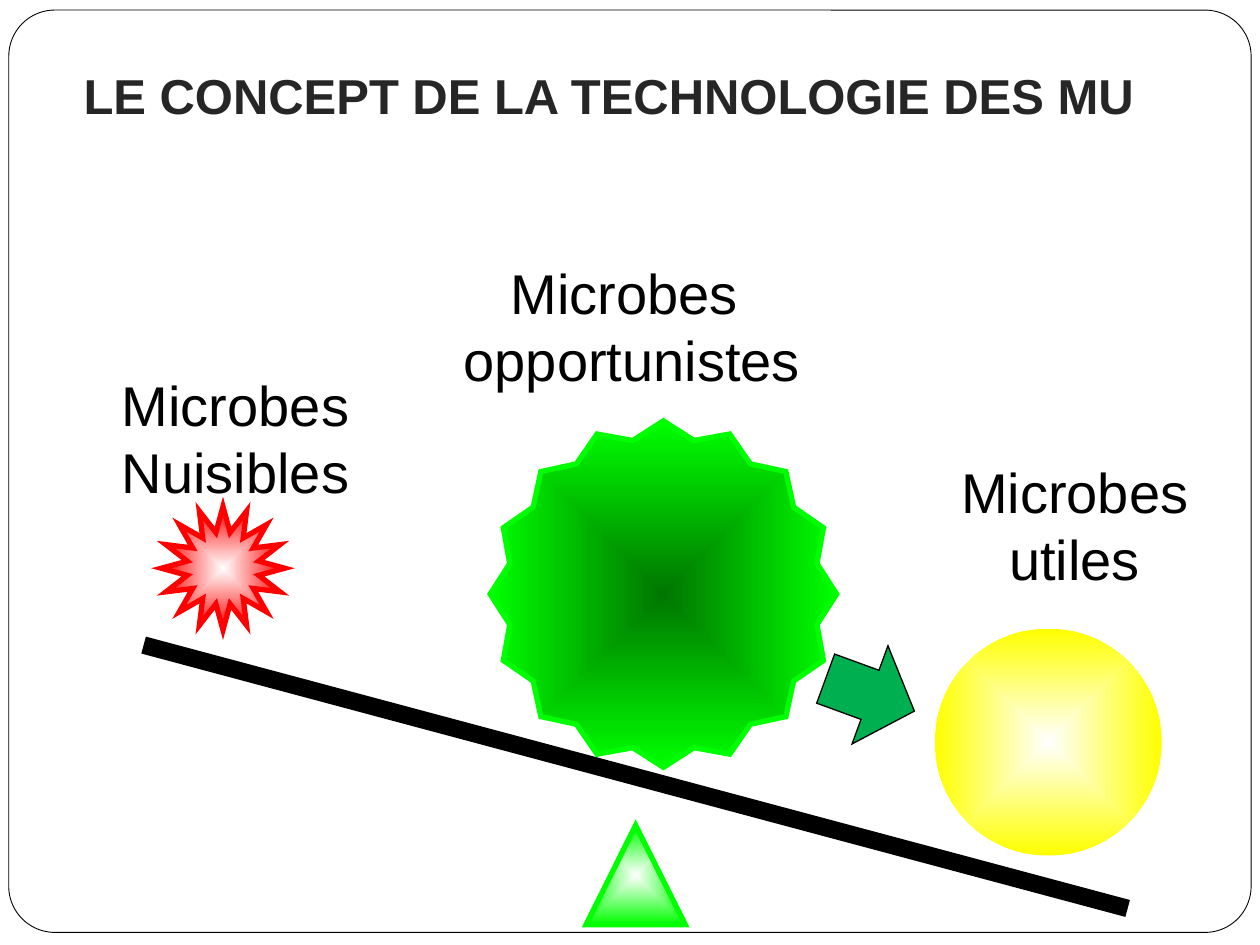
from lxml import etree
from pptx import Presentation
from pptx.dml.color import RGBColor
from pptx.enum import shapes, text
from pptx.oxml import parse_xml
from pptx.oxml.ns import nsdecls, qn
from pptx.util import Inches, Pt

BLACK = RGBColor(0x00, 0x00, 0x00)
WHITE = RGBColor(0xFF, 0xFF, 0xFF)
TITLE_GREY = RGBColor(0x26, 0x26, 0x26)
RED = RGBColor(0xFF, 0x00, 0x00)
YELLOW = RGBColor(0xFF, 0xFF, 0x00)
LIME = RGBColor(0x00, 0xFF, 0x00)
DARK_GREEN = RGBColor(0x00, 0x76, 0x00)
ARROW_GREEN = RGBColor(0x00, 0xB0, 0x50)

PRESET = shapes.MSO_SHAPE
LABEL_HEIGHT = 1.18


def add_preset(slide, preset, box, line=None, width=0, adjust=None):
    figure = slide.shapes.add_shape(preset, *map(Inches, box))
    figure.shadow.inherit = False
    if adjust is not None:
        figure.adjustments[0] = adjust
    if line is None:
        figure.line.fill.background()
    else:
        figure.line.color.rgb = line
        figure.line.width = Pt(width)
        outline = figure._element.spPr.find(qn("a:ln"))
        etree.SubElement(outline, qn("a:miter"), lim="800000")
    return figure


def fill_solid(figure, color):
    figure.fill.solid()
    figure.fill.fore_color.rgb = color


def fill_from_centre(figure, centre, edge):
    figure.fill.gradient()
    for stop, color in zip(figure.fill.gradient_stops, (centre, edge)):
        stop.color.rgb = color
    direction = figure.fill._xPr.find(qn("a:gradFill")).find(qn("a:lin"))
    direction.getparent().replace(direction, parse_xml(
        f'<a:path {nsdecls("a")} path="shape">'
        '<a:fillToRect l="50000" t="50000" r="50000" b="50000"/></a:path>'))


def add_beam(slide, start, end):
    beam = slide.shapes.add_connector(
        shapes.MSO_CONNECTOR.STRAIGHT, *map(Inches, start + end))
    beam.line.color.rgb = BLACK
    beam.line.width = Pt(10)
    etree.SubElement(beam._element.spPr, qn("a:effectLst"))


def add_text(slide, box, lines, size, color, bold=False, wrap=False):
    frame = slide.shapes.add_textbox(*map(Inches, box)).text_frame
    frame.word_wrap = wrap
    frame.text = "\n".join(lines)
    for paragraph in frame.paragraphs:
        paragraph.alignment = text.PP_ALIGN.CENTER
        paragraph.font.name = "Arial"
        paragraph.font.size = Pt(size)
        paragraph.font.bold = bold
        paragraph.font.color.rgb = color
    return frame


def add_label(slide, left, top, width, lines):
    frame = add_text(slide, (left, top, width, LABEL_HEIGHT), lines, 32, BLACK)
    frame.auto_size = text.MSO_AUTO_SIZE.SHAPE_TO_FIT_TEXT


def add_title(slide, title):
    frame = add_text(slide, (0.16, 0.17, 9.45, 0.92), [title], 28, TITLE_GREY,
                     bold=True, wrap=True)
    frame.vertical_anchor = text.MSO_ANCHOR.BOTTOM
    frame.margin_bottom = Inches(0.1)


def main():
    deck = Presentation()
    deck.slide_width, deck.slide_height = Inches(10), Inches(7.5)
    slide = deck.slides.add_slide(deck.slide_layouts[6])

    border = add_preset(slide, PRESET.ROUNDED_RECTANGLE, (0.07, 0.08, 9.86, 7.32),
                        BLACK, 0.5, 0.05)
    fill_solid(border, WHITE)

    harmful = add_preset(slide, PRESET.STAR_16_POINT, (1.28, 4.02, 0.98, 0.98),
                         RED, 3, 0.295)
    fill_from_centre(harmful, WHITE, RED)
    add_beam(slide, (1.14, 5.12), (8.95, 7.21))
    pivot = add_preset(slide, PRESET.ISOSCELES_TRIANGLE, (4.65, 6.55, 0.79, 0.79),
                       LIME, 3)
    fill_from_centre(pivot, WHITE, LIME)
    useful = add_preset(slide, PRESET.OVAL, (7.42, 4.99, 1.8, 1.8))
    fill_from_centre(useful, WHITE, YELLOW)
    opportunist = add_preset(slide, PRESET.STAR_16_POINT, (3.89, 3.34, 2.75, 2.75),
                             LIME, 3, 0.452)
    fill_from_centre(opportunist, DARK_GREEN, LIME)

    pull = add_preset(slide, PRESET.RIGHT_ARROW, (6.53, 5.1, 0.75, 0.83), BLACK, 0.75)
    pull.rotation = 20.1
    fill_solid(pull, ARROW_GREEN)

    add_label(slide, 0.86, 2.89, 2.02, ["Microbes", "Nuisibles"])
    add_label(slide, 7.52, 3.58, 2.02, ["Microbes", "utiles"])
    add_title(slide, "LE CONCEPT DE LA TECHNOLOGIE DES MU ")
    add_label(slide, 3.57, 2, 2.89, ["Microbes ", "opportunistes"])

    deck.save("out.pptx")


if __name__ == "__main__":
    main()
